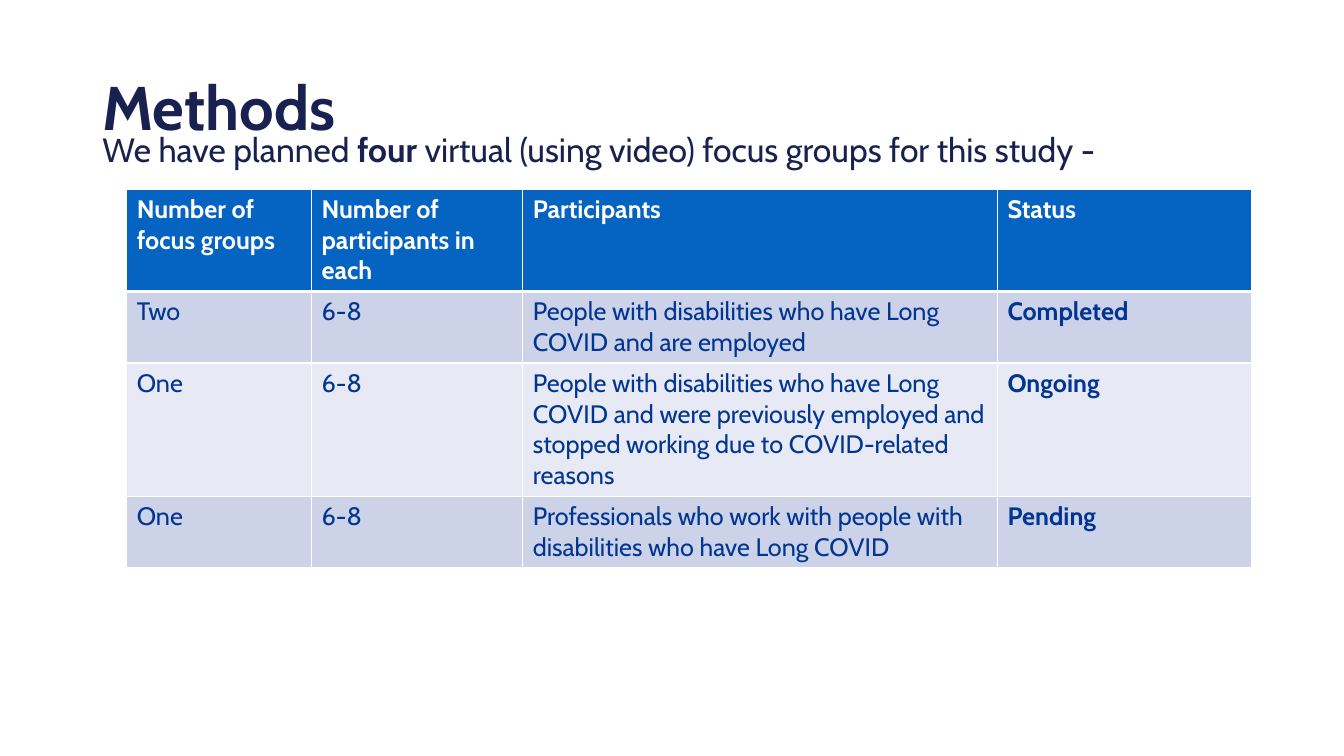
from lxml import etree
from pptx import Presentation
from pptx.dml.color import RGBColor
from pptx.enum import text
from pptx.oxml import ns
from pptx.util import Pt

FONT = "Cabin"
NAVY = RGBColor(0x18, 0x21, 0x4F)
INK = RGBColor(0x01, 0x35, 0x91)
HEADER_BLUE = RGBColor(0x05, 0x63, 0xC1)
BAND_DARK = RGBColor(0xCC, 0xD3, 0xE9)
BAND_LIGHT = RGBColor(0xE7, 0xEA, 0xF4)
WHITE = RGBColor(0xFF, 0xFF, 0xFF)


def add_span(para, words, size, color, bold=False):
    span = para.add_run()
    span.text = words
    span.font.name = FONT
    span.font.size = Pt(size)
    span.font.bold = bold
    span.font.color.rgb = color


def add_border(cell, side, width):
    """Draw a white line on one side (L, R, T or B) of a cell."""
    line = etree.SubElement(cell._tc.get_or_add_tcPr(), ns.qn(f"a:ln{side}"), w=str(Pt(width)))
    fill = etree.SubElement(line, ns.qn("a:solidFill"))
    etree.SubElement(fill, ns.qn("a:srgbClr"), val=str(WHITE))


deck = Presentation()
deck.slide_width = Pt(960)
deck.slide_height = Pt(540)
page = deck.slides.add_slide(deck.slide_layouts[1])

# Title and introduction
title, body = page.placeholders
for box, top, height in ((title, 1.5, 104.5), (body, 88.5, 397.5)):
    box.left, box.top, box.width, box.height = Pt(66), Pt(top), Pt(828), Pt(height)
    box.text_frame.auto_size = text.MSO_AUTO_SIZE.NONE
    box.text_frame.word_wrap = True

title.text_frame.vertical_anchor = text.MSO_ANCHOR.BOTTOM
para = title.text_frame.paragraphs[0]
para.alignment = text.PP_ALIGN.LEFT
para.line_spacing = 0.9
add_span(para, "Methods", 44, NAVY, True)

para = body.text_frame.paragraphs[0]
para.space_before = Pt(0)
props = para._p.get_or_add_pPr()
props.set("marL", "0")
props.set("indent", "0")
etree.SubElement(props, ns.qn("a:buNone"))
add_span(para, "We have planned ", 24, NAVY)
add_span(para, "four", 24, NAVY, True)
add_span(para, " virtual (using video) focus groups for this study -", 24, NAVY)

# Focus group table
rows = [
    ("Number of focus groups", "Number of participants in each", "Participants", "Status"),
    ("Two", "6-8", "People with disabilities who have Long COVID and are employed", "Completed"),
    ("One", "6-8", "People with disabilities who have Long COVID and were previously employed "
     "and stopped working due to COVID-related reasons", "Ongoing"),
    ("One", "6-8", "Professionals who work with people with disabilities who have Long COVID",
     "Pending"),
]
column_widths = [132, 151, 339, 181.5]
row_heights = [21.9 * lines + 7.2 for lines in (3, 2, 4, 2)]
row_fills = [HEADER_BLUE, BAND_DARK, BAND_LIGHT, BAND_DARK]

table = page.shapes.add_table(len(rows), len(column_widths), Pt(90.5), Pt(135),
                              Pt(sum(column_widths)), Pt(sum(row_heights))).table
for column, width in zip(table.columns, column_widths):
    column.width = Pt(width)
for r, labels in enumerate(rows):
    table.rows[r].height = Pt(row_heights[r])
    for c, label in enumerate(labels):
        cell = table.cell(r, c)
        add_border(cell, "L", 1)
        add_border(cell, "R", 1)
        add_border(cell, "T", 3 if r == 1 else 1)
        add_border(cell, "B", 3 if r == 0 else 1)
        cell.fill.solid()
        cell.fill.fore_color.rgb = row_fills[r]
        add_span(cell.text_frame.paragraphs[0], label, 18, INK if r else WHITE,
                 r == 0 or c == 3)

deck.save("out.pptx")
